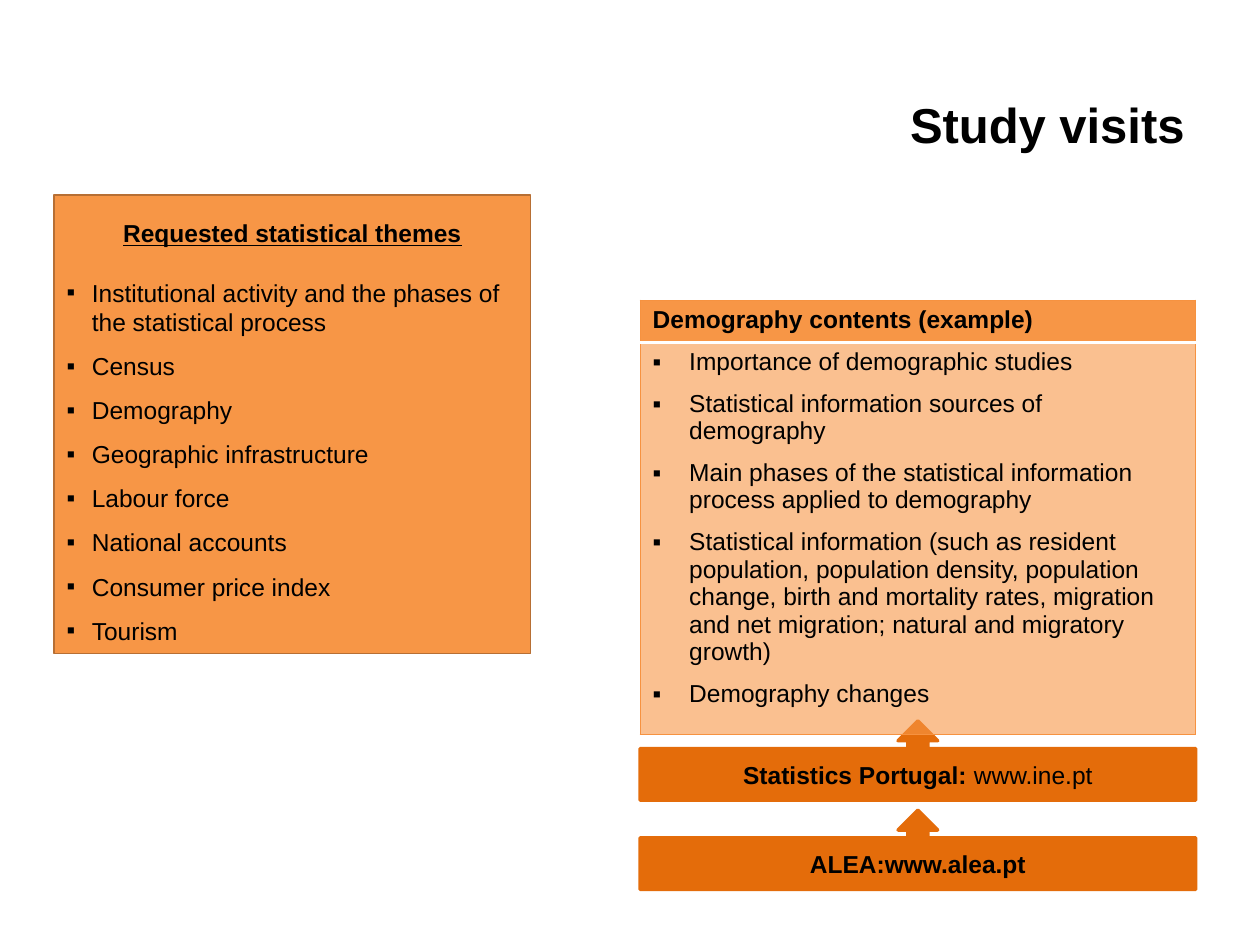
"""Build the study visits slide with its themes, contents table and source callouts."""
import lxml.etree
import pptx
import pptx.dml.color
import pptx.enum.shapes
import pptx.enum.text
import pptx.oxml.ns
import pptx.util

Pt = pptx.util.Pt
RGBColor = pptx.dml.color.RGBColor
Shape = pptx.enum.shapes.MSO_SHAPE
Align = pptx.enum.text.PP_ALIGN
Anchor = pptx.enum.text.MSO_ANCHOR
qn = pptx.oxml.ns.qn

BLACK = RGBColor(0x00, 0x00, 0x00)
WHITE = RGBColor(0xFF, 0xFF, 0xFF)
ORANGE = RGBColor(0xF7, 0x96, 0x46)
BROWN = RGBColor(0xB7, 0x6F, 0x34)
DARK_ORANGE = RGBColor(0xE4, 0x6C, 0x0A)
BORDER_ORANGE = RGBColor(0xF6, 0x92, 0x40)

THEMES = [
    "Institutional activity and the phases of the statistical process",
    "Census", "Demography", "Geographic infrastructure", "Labour force",
    "National accounts", "Consumer price index", "Tourism",
]
CONTENTS = [
    "Importance of demographic studies",
    "Statistical information sources of demography",
    "Main phases of the statistical information process applied to demography",
    "Statistical information (such as resident population, population density, "
    "population change, birth and mortality rates, migration and net migration; "
    "natural and migratory growth)",
    "Demography changes",
]
SOURCES = [
    [("Statistics Portugal: ", {"bold": True}), ("www.ine.pt", {})],
    [("ALEA:www.alea.pt", {"bold": True})],
]
RIGHT_LEFT, RIGHT_WIDTH = 365.75, 317.5


def apply(target, values):
    for name, value in values.items():
        setattr(target, name, value)


class SlideBuilder:
    def __init__(self, slide):
        self.slide = slide
        self.font = {"name": "Arial", "size": Pt(14), "bold": False}

    def paragraph(self, frame, runs, layout, indent=0):
        first = not frame.paragraphs[0].runs
        paragraph = frame.paragraphs[0] if first else frame.add_paragraph()
        apply(paragraph, {"alignment": Align.LEFT, **layout})
        if first:
            paragraph.space_before = Pt(0)
        if indent:
            properties = paragraph._p.get_or_add_pPr()
            properties.set("marL", str(Pt(indent)))
            properties.set("indent", str(-Pt(indent)))
            lxml.etree.SubElement(properties, qn("a:buFont"), typeface="Arial")
            lxml.etree.SubElement(properties, qn("a:buChar"), char="▪")
        for text, style in runs:
            run = paragraph.add_run()
            run.text = text
            apply(run.font, {**self.font, **style})
            run.font.color.rgb = BLACK

    def title(self, text, box):
        frame = self.slide.shapes.add_textbox(*map(Pt, box)).text_frame
        apply(frame, {"word_wrap": True, "vertical_anchor": Anchor.MIDDLE})
        self.paragraph(frame, [(text, {"size": Pt(28), "bold": True})], {"alignment": Align.RIGHT})

    def shape(self, kind, box, fill, line, line_width):
        shape = self.slide.shapes.add_shape(kind, *map(Pt, box))
        shape.shadow.inherit = False
        shape.fill.solid()
        shape.fill.fore_color.rgb = fill
        shape.line.color.rgb = line
        shape.line.width = Pt(line_width)
        apply(shape.text_frame, {"word_wrap": True, "vertical_anchor": Anchor.MIDDLE})
        return shape.text_frame

    def table(self, box, heights):
        table = self.slide.shapes.add_table(len(heights), 1, *map(Pt, box)).table
        for row, height in zip(table.rows, heights):
            row.height = Pt(height)
        return table

    def border(self, cell, side, color, width):
        line = lxml.etree.SubElement(cell._tc.get_or_add_tcPr(), qn(f"a:ln{side}"), w=str(Pt(width)))
        fill = lxml.etree.SubElement(line, qn("a:solidFill"))
        lxml.etree.SubElement(fill, qn("a:srgbClr"), val=str(color))

    def cell(self, cell, borders, opacity=100):
        for side, (color, width) in borders.items():
            self.border(cell, side, color, width)
        cell.fill.solid()
        cell.fill.fore_color.rgb = ORANGE
        if opacity < 100:
            color = cell._tc.tcPr.find(qn("a:solidFill")).find(qn("a:srgbClr"))
            lxml.etree.SubElement(color, qn("a:alpha"), val=str(opacity * 1000))
        return cell.text_frame


def main():
    presentation = pptx.Presentation()
    apply(presentation, {"slide_width": Pt(720), "slide_height": Pt(540)})
    builder = SlideBuilder(presentation.slides.add_slide(presentation.slide_layouts[6]))

    builder.title("Study visits", (206.5, 26, 477.5, 90))

    themes = builder.shape(Shape.RECTANGLE, (31, 111.5, 272.25, 262), ORANGE, BROWN, 1)
    heading = [("Requested statistical themes", {"bold": True, "underline": True})]
    builder.paragraph(themes, heading,
                      {"alignment": Align.CENTER, "line_spacing": 1.5, "space_after": Pt(17)})
    for index, theme in enumerate(THEMES):
        builder.paragraph(themes, [(theme, {})], {"line_spacing": 1.5 if index else 1.0}, 14.4)

    for index, runs in enumerate(SOURCES):
        box = (RIGHT_LEFT, 412 + 51 * index, RIGHT_WIDTH, 45.25)
        callout = builder.shape(Shape.UP_ARROW_CALLOUT, box, DARK_ORANGE, DARK_ORANGE, 2)
        builder.paragraph(callout, runs, {"alignment": Align.CENTER})

    heights = (24, 224)
    table = builder.table((RIGHT_LEFT, 171.5, RIGHT_WIDTH, sum(heights)), heights)
    thin, divider = (BORDER_ORANGE, 0.75), (WHITE, 2)
    header = builder.cell(table.cell(0, 0), {"L": thin, "R": thin, "T": thin, "B": divider})
    builder.paragraph(header, [("Demography contents (example)", {"bold": True})], {})
    body = builder.cell(table.cell(1, 0), {"L": thin, "R": thin, "T": divider, "B": thin}, 60)
    for item in CONTENTS:
        builder.paragraph(body, [(item, {})], {"space_before": Pt(6), "space_after": Pt(2)}, 20.9)

    presentation.save("out.pptx")


if __name__ == "__main__":
    main()
